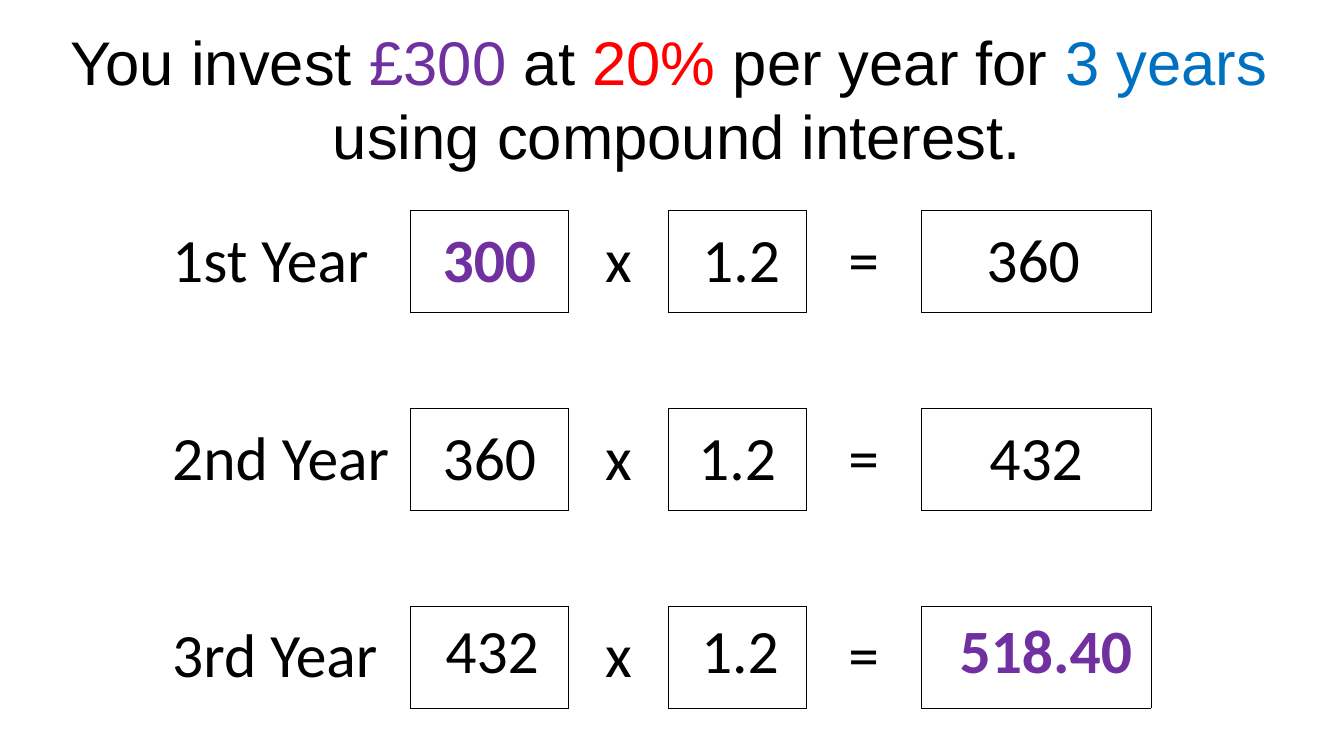
from pptx import Presentation
from pptx.dml.color import RGBColor
from pptx.enum.text import MSO_ANCHOR, MSO_AUTO_SIZE, PP_ALIGN
from pptx.oxml import parse_xml
from pptx.oxml.ns import nsdecls
from pptx.util import Cm, Pt

LEFT, MID = PP_ALIGN.LEFT, PP_ALIGN.CENTER
MIDDLE = MSO_ANCHOR.MIDDLE
GROW = MSO_AUTO_SIZE.SHAPE_TO_FIT_TEXT
PLAIN = "{2D5ABB26-0587-4C30-8999-92F81FD0307C}"  # no style, no grid

BLACK, WHITE = "000000", "FFFFFF"
PURPLE, RED, BLUE = "7030A0", "FF0000", "0070C0"

WIDTHS = [6, 3.99, 2.51, 3.48, 1.22, 1.68, 5.79]
TALL, GAP = 2.57, 2.41
TOP, LINE = 5.31, 0.5
BOXES = (1, 3, 6)


def color(code):
    return RGBColor.from_string(code)


def write(para, text, font="Calibri", size=44, ink=BLACK, bold=False, align=MID):
    para.alignment = align
    run = para.add_run()
    run.text = text
    run.font.name, run.font.size = font, Pt(size)
    run.font.color.rgb = color(ink)
    run.font.bold = bold


def boxed(row, col):
    return row in (0, 2, 4) and col in BOXES


def border(cell, side):
    cell._tc.get_or_add_tcPr().append(parse_xml(
        f'<a:ln{side} {nsdecls("a")} w="{Pt(LINE)}"><a:solidFill>'
        f'<a:srgbClr val="{BLACK}"/></a:solidFill></a:ln{side}>'))


class Deck:
    def __init__(self):
        self.prs = Presentation()
        self.prs.slide_width, self.prs.slide_height = Cm(33.87), Cm(19.05)
        self.slide = self.prs.slides.add_slide(self.prs.slide_layouts[6])

    def title(self, x, y, w, h, lines):
        frame = self.slide.shapes.add_textbox(Cm(x), Cm(y), Cm(w), Cm(h)).text_frame
        frame.word_wrap = True
        frame.auto_size = GROW
        for i, line in enumerate(lines):
            para = frame.add_paragraph() if i else frame.paragraphs[0]
            for text, ink in line:
                write(para, text, font="Arial", ink=ink)

    def table(self, x, y, widths, heights, fill=None):
        grid = self.slide.shapes.add_table(
            len(heights), len(widths), Cm(x), Cm(y),
            Cm(sum(widths)), Cm(sum(heights))).table
        grid.first_row = grid.horz_banding = False
        grid._tbl.tblPr[0].text = PLAIN
        for col, wide in zip(grid.columns, widths):
            col.width = Cm(wide)
        for row, high in zip(grid.rows, heights):
            row.height = Cm(high)
        for cell in grid.iter_cells():
            cell.vertical_anchor = MIDDLE
            cell.margin_left = cell.margin_right = 0
            cell.margin_top = cell.margin_bottom = 0
            if fill:
                cell.fill.solid()
                cell.fill.fore_color.rgb = color(fill)
            else:
                cell.fill.background()
        return grid

    def frame(self, grid):
        """Draw every edge that touches a boxed cell."""
        for r in range(len(grid.rows)):
            for c in range(len(grid.columns)):
                cell = grid.cell(r, c)
                near = {"L": (r, c - 1), "R": (r, c + cell.span_width),
                        "T": (r - 1, c), "B": (r + 1, c)}
                props = cell._tc.get_or_add_tcPr()
                fill = props[0]
                for side, spot in near.items():
                    if boxed(r, c) or boxed(*spot):
                        border(cell, side)
                props.append(fill)  # the fill follows the borders

    def sums(self, x, y, first, values):
        """Lay one row of values over the boxes from column first on."""
        grid = self.table(x, y, WIDTHS[first:], [TALL])
        grid.cell(0, 4 - first).merge(grid.cell(0, 5 - first))
        for col, runs in values.items():
            for text, look in runs:
                write(grid.cell(0, col - first).text_frame.paragraphs[0], text, **look)


def main():
    deck = Deck()

    # Grid of years and boxes
    grid = deck.table(4.34, TOP, WIDTHS, [TALL, GAP, TALL, GAP, TALL], fill=WHITE)
    for i, year in enumerate(("1st Year", "2nd Year", "3rd Year")):
        row = 2 * i
        grid.cell(row, 4).merge(grid.cell(row, 5))
        for col, text, align in ((0, year, LEFT), (2, "x", MID), (4, "=", MID)):
            write(grid.cell(row, col).text_frame.paragraphs[0], text, align=align)
    write(grid.cell(0, 1).text_frame.paragraphs[0], "300", ink=PURPLE, bold=True)
    deck.frame(grid)

    # Question
    deck.title(0.84, 0.48, 32.46, 4.01, [
        [("You invest ", BLACK), ("£300 ", PURPLE), ("at ", BLACK), ("20%", RED),
         (" per year for", BLACK), (" 3 years ", BLUE)],
        [("using compound interest.", BLACK)],
    ])

    # Worked values
    rate = [("1.2", {})]
    deck.sums(16.94, TOP, 3, {3: rate, 6: [("360 ", {})]})
    deck.sums(10.34, 10.29, 1, {1: [("360", {})], 3: rate, 6: [("432", {})]})
    deck.sums(10.41, 15.16, 1, {
        1: [("432", {})], 3: rate,
        6: [(" ", {}), ("518.40", {"ink": PURPLE, "bold": True})]})

    deck.prs.save("out.pptx")


if __name__ == "__main__":
    main()
